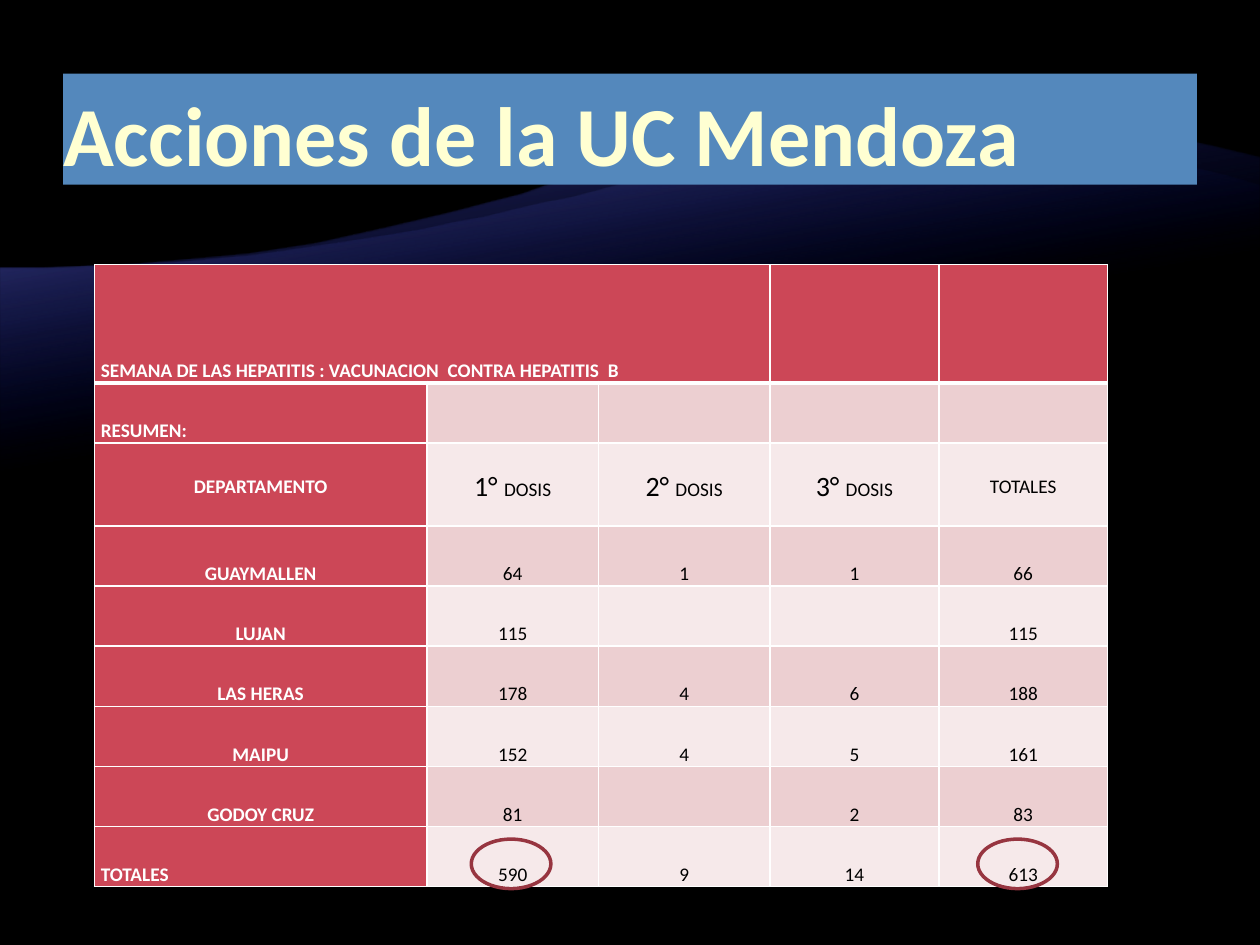
from lxml import etree
from pptx import Presentation
from pptx.dml.color import RGBColor
from pptx.enum.shapes import MSO_SHAPE
from pptx.enum.text import MSO_ANCHOR, PP_ALIGN
from pptx.oxml import parse_xml
from pptx.oxml.ns import qn
from pptx.util import Pt

OVAL = MSO_SHAPE.OVAL
BOTTOM, MIDDLE = MSO_ANCHOR.BOTTOM, MSO_ANCHOR.MIDDLE
LEFT, CENTER = PP_ALIGN.LEFT, PP_ALIGN.CENTER
NS = "http://schemas.openxmlformats.org/drawingml/2006/main"
FONT = "Calibri"
RED, PINK, PALE = "CC4757", "ECCFD1", "F6E9EA"
WHITE, BLACK = "FFFFFF", "000000"

COLS = [190, 98, 98, 96.5, 96.5]
ROW_HEIGHT = 34.3
HEIGHTS = {0: 67.7, 2: 47.5}
ROWS = [
    ["SEMANA DE LAS HEPATITIS : VACUNACION  CONTRA HEPATITIS  B", "", "", "", ""],
    ["RESUMEN:", "", "", "", ""],
    ["DEPARTAMENTO", "1° DOSIS", "2° DOSIS", "3° DOSIS", "TOTALES"],
    ["GUAYMALLEN", "64", "1", "1", "66"],
    ["LUJAN", "115", "", "", "115"],
    ["LAS HERAS", "178", "4", "6", "188"],
    ["MAIPU", "152", "4", "5", "161"],
    ["GODOY CRUZ", "81", "", "2", "83"],
    ["TOTALES", "590", "9", "14", "613"],
]
LEFT_ALIGNED_ROWS = (0, 1, len(ROWS) - 1)


def rgb(value):
    return RGBColor.from_string(value)


def style_run(r, size, color, bold):
    r.font.name = FONT
    r.font.size = Pt(size)
    r.font.color.rgb = rgb(color)
    r.font.bold = bold


def curve_points(start, c1, c2, end, steps=40):
    for i in range(1, steps + 1):
        t = i / steps
        u = 1 - t
        yield tuple(
            u**3 * a + 3 * u * u * t * b + 3 * u * t * t * c + t**3 * d
            for a, b, c, d in zip(start, c1, c2, end)
        )


def add_wave(s, bottom, c1, c2, end, color, alpha):
    start = (0, 153.4)
    builder = s.shapes.build_freeform(0, bottom, scale=Pt(1))
    points = [start, *curve_points(start, c1, c2, end), (720, bottom)]
    builder.add_line_segments(points, close=True)
    sp = builder.convert_to_shape()
    sp.shadow.inherit = False
    sp.line.fill.background()
    grad = parse_xml(
        f'<a:gradFill xmlns:a="{NS}" rotWithShape="1"><a:gsLst>'
        '<a:gs pos="65000"><a:srgbClr val="000D9E"><a:alpha val="0"/></a:srgbClr></a:gs>'
        f'<a:gs pos="100000"><a:srgbClr val="{color}"><a:alpha val="{alpha * 1000}"/></a:srgbClr></a:gs>'
        '</a:gsLst><a:lin ang="15600000" scaled="0"/></a:gradFill>'
    )
    sp._element.spPr.find(qn("a:custGeom")).addnext(grad)


def add_title(s, text):
    title = s.shapes.title
    s.shapes._spTree.append(title._element)
    title.left, title.top, title.width, title.height = Pt(36), Pt(42), Pt(648), Pt(63.5)
    title.fill.solid()
    title.fill.fore_color.rgb = rgb("5488BC")
    tf = title.text_frame
    tf.text = text
    tf.vertical_anchor = BOTTOM
    tf.margin_left = tf.margin_right = 0
    tf.margin_top = tf.margin_bottom = Pt(0.7)
    p = tf.paragraphs[0]
    p.alignment = LEFT
    style_run(p.runs[0], 48, "FFFFD2", True)


def add_borders(cell, bottom_width):
    tc_pr = cell._tc.get_or_add_tcPr()
    for side, width in (("L", 1), ("R", 1), ("T", 1), ("B", bottom_width)):
        ln = etree.SubElement(tc_pr, qn(f"a:ln{side}"), w=str(Pt(width)))
        fill = etree.SubElement(ln, qn("a:solidFill"))
        etree.SubElement(fill, qn("a:srgbClr"), val=WHITE)


def fill_cell(cell, row, col, text):
    heading = row == 0 or col == 0
    add_borders(cell, 3 if row == 0 else 1)
    cell.fill.solid()
    cell.fill.fore_color.rgb = rgb(RED if heading else PINK if row % 2 else PALE)
    cell.margin_left = cell.margin_right = Pt(3.6)
    cell.margin_top = cell.margin_bottom = 0
    cell.vertical_anchor = MIDDLE if row == 2 else BOTTOM
    if not text:
        return
    p = cell.text_frame.paragraphs[0]
    p.line_spacing = 1.15
    p.alignment = LEFT if col == 0 and row in LEFT_ALIGNED_ROWS else CENTER
    ordinal, degree, rest = text.partition("° ")
    parts = [(ordinal + degree, 16), (rest, 11)] if degree else [(text, 11)]
    for part, size in parts:
        r = p.add_run()
        r.text = part
        style_run(r, size, WHITE if heading else BLACK, heading)


def add_dose_table(s):
    heights = [HEIGHTS.get(i, ROW_HEIGHT) for i in range(len(ROWS))]
    frame = s.shapes.add_table(
        len(ROWS), len(COLS), Pt(54), Pt(151.2), Pt(sum(COLS)), Pt(sum(heights))
    )
    table = frame.table
    for column, width in zip(table.columns, COLS):
        column.width = Pt(width)
    for row, height in zip(table.rows, heights):
        row.height = Pt(height)
    for i, values in enumerate(ROWS):
        for j, text in enumerate(values):
            fill_cell(table.cell(i, j), i, j, text)
    table.cell(0, 0).merge(table.cell(0, 2))


def add_ring(s, left):
    sp = s.shapes.add_shape(OVAL, Pt(left), Pt(479.5), Pt(45.5), Pt(28.3))
    sp.shadow.inherit = False
    sp.fill.background()
    sp.line.color.rgb = rgb("973540")
    sp.line.width = Pt(2)


def main():
    prs = Presentation()
    prs.slide_width, prs.slide_height = Pt(720), Pt(540)
    s = prs.slides.add_slide(prs.slide_layouts[5])
    s.background.fill.solid()
    s.background.fill.fore_color.rgb = rgb(BLACK)
    add_wave(s, 527.8, (360, 153.4), (384.5, 3.6), (720, 90), "797FFF", 55)
    add_wave(s, 458.6, (360, 153.4), (430.6, 22.3), (720, 105.8), "A3A7FF", 30)
    add_title(s, "Acciones de la UC Mendoza")
    add_dose_table(s)
    for left in (269.3, 558.7):
        add_ring(s, left)
    prs.save("out.pptx")


if __name__ == "__main__":
    main()
